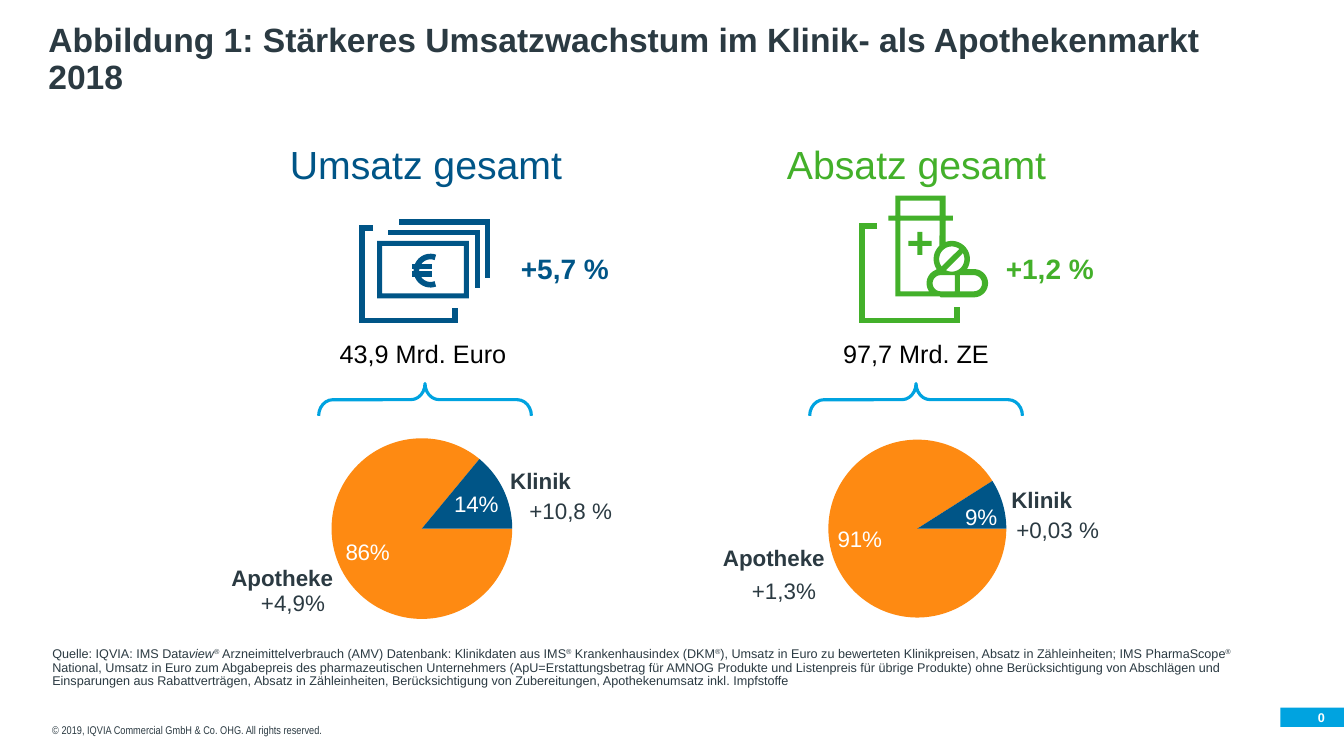
from dataclasses import dataclass
from math import cos, radians, sin

from lxml import etree
from pptx import Presentation
from pptx.chart.data import CategoryChartData
from pptx.dml.color import RGBColor
from pptx.enum.chart import XL_CHART_TYPE, XL_LABEL_POSITION
from pptx.enum.shapes import MSO_CONNECTOR, MSO_SHAPE
from pptx.enum.text import MSO_ANCHOR, MSO_AUTO_SIZE, PP_ALIGN
from pptx.oxml.ns import qn
from pptx.util import Emu, Inches, Pt

LEFT, CENTER, RIGHT = PP_ALIGN.LEFT, PP_ALIGN.CENTER, PP_ALIGN.RIGHT
TOP, MIDDLE, BOTTOM = MSO_ANCHOR.TOP, MSO_ANCHOR.MIDDLE, MSO_ANCHOR.BOTTOM
RECT, BRACE = MSO_SHAPE.RECTANGLE, MSO_SHAPE.LEFT_BRACE

DARK, BLACK, WHITE = "2B3A42", "000000", "FFFFFF"
NAVY, GREEN, CYAN, ORANGE = "005587", "43B02A", "00A3E0", "FE8A12"
CELL = Inches(0.1)  # columns and rows are both a tenth of an inch
TIGHT, PADDED = (0, 0), (1, 0.5)  # side and top insets in cells


@dataclass
class Label:
    text: str
    at: tuple  # column, row, columns wide, rows high
    size: float = 16
    color: str = DARK
    bold: bool = False
    align: PP_ALIGN = CENTER
    anchor: MSO_ANCHOR = TOP
    insets: tuple = TIGHT


@dataclass
class Pie:
    at: tuple
    plot: tuple  # x, y, width, height as shares of the chart
    shares: tuple
    brace_column: float


@dataclass
class Stroke:
    color: str
    points: list


@dataclass
class Silhouette:
    color: str
    contours: list  # the outer edge, then the holes


def cells(value: float) -> Emu:
    return Emu(round(value * CELL))


def rgb(color: str) -> RGBColor:
    return RGBColor.from_string(color)


def arc(x: float, y: float, radius: float, start: int, end: int) -> list:
    angles = [radians(start + (end - start) * step / 24) for step in range(25)]
    return [(x + radius * cos(a), y - radius * sin(a)) for a in angles]


def rectangle(left: float, top: float, right: float, bottom: float) -> list:
    return [(left, top), (right, top), (right, bottom), (left, bottom)]


def add_span(para, text, size, color, bold=False, font="Arial"):
    span = para.add_run()
    span.text = text
    span.font.name, span.font.size, span.font.bold = font, Pt(size), bold
    span.font.color.rgb = rgb(color)
    return span


def set_frame(box, anchor, insets, wrap):
    frame = box.text_frame
    frame.auto_size, frame.word_wrap, frame.vertical_anchor = MSO_AUTO_SIZE.NONE, wrap, anchor
    frame.margin_left = frame.margin_right = cells(insets[0])
    frame.margin_top = frame.margin_bottom = cells(insets[1])
    return frame.paragraphs[0]


def add_label(page, label: Label):
    box = page.shapes.add_textbox(*map(cells, label.at))
    para = set_frame(box, label.anchor, label.insets, label.insets == PADDED)
    para.alignment = label.align
    add_span(para, label.text, label.size, label.color, label.bold)


def set_fill(shape, color: str):
    shape.fill.solid()
    shape.fill.fore_color.rgb = rgb(color)
    shape.line.fill.background()
    shape.shadow.inherit = False


def add_band(page, at: tuple, color: str):
    band = page.shapes.add_shape(RECT, *map(cells, at))
    set_fill(band, color)
    return band


def add_stroke(page, stroke: Stroke):
    points = [(cells(x), cells(y)) for x, y in stroke.points]
    if len(points) == 2:
        line = page.shapes.add_connector(MSO_CONNECTOR.STRAIGHT, *points[0], *points[1])
    else:
        builder = page.shapes.build_freeform(*points[0], scale=1.0)
        builder.add_line_segments(points[1:], close=False)
        line = builder.convert_to_shape()
        line.fill.background()
    line.line.color.rgb, line.line.width = rgb(stroke.color), Pt(4)
    etree.SubElement(line.line._get_or_add_ln(), qn("a:miter"), lim="800000")
    etree.SubElement(line._element.spPr, qn("a:effectLst"))


def add_silhouette(page, silhouette: Silhouette):
    outer, *holes = [[(cells(x), cells(y)) for x, y in c] for c in silhouette.contours]
    builder = page.shapes.build_freeform(*outer[0], scale=1.0)
    builder.add_line_segments(outer[1:], close=True)
    for hole in holes:
        builder.move_to(*hole[0])
        builder.add_line_segments(hole[1:], close=True)
    set_fill(builder.convert_to_shape(), silhouette.color)


def add_brace(page, column: float):
    brace = page.shapes.add_shape(BRACE, *map(cells, (column, 29.1, 3.2, 21.1)))
    brace.rotation = 90
    brace.adjustments[0], brace.adjustments[1] = 0.44, 0.5
    brace.fill.background()
    brace.line.color.rgb, brace.line.width = rgb(CYAN), Pt(2.25)
    brace.shadow.inherit = False


def add_pie(page, pie: Pie):
    data = CategoryChartData(number_format='0"%"')
    data.categories = ["1", "2"]
    data.add_series("Series 1", pie.shares)
    chart = page.shapes.add_chart(XL_CHART_TYPE.PIE, *map(cells, pie.at), data).chart
    chart.has_title = chart.has_legend = False
    chart.font.name, chart.font.size, chart.font.color.rgb = "Arial", Pt(10), rgb(DARK)
    plot = chart.plots[0]
    plot.vary_by_categories = False
    for index, color in enumerate((ORANGE, NAVY)):
        fill = plot.series[0].points[index].format.fill
        fill.solid()
        fill.fore_color.rgb = rgb(color)
    labels = plot.series[0].data_labels
    labels.show_value, labels.position = True, XL_LABEL_POSITION.INSIDE_END
    labels.number_format, labels.number_format_is_linked = '0"%"', False
    labels.font.name, labels.font.size, labels.font.color.rgb = "Arial", Pt(16), rgb(WHITE)
    # First slice starts at three o'clock, inner plot area is fixed
    area = chart._chartSpace.chart.plotArea
    etree.SubElement(area.find(qn("c:pieChart")), qn("c:firstSliceAng"), val="90")
    for old in area.findall(qn("c:layout")):
        area.remove(old)
    layout = etree.Element(qn("c:layout"))
    manual = etree.SubElement(layout, qn("c:manualLayout"))
    settings = [("layoutTarget", "inner"), ("xMode", "edge"), ("yMode", "edge")]
    for name, value in settings + list(zip("xywh", pie.plot)):
        etree.SubElement(manual, qn(f"c:{name}"), val=str(value))
    area.insert(0, layout)


BOTTLE_AND_PILLS = [
    [(96, 26.7), *arc(94.4, 25.7, 1.8, -33, 110), (93.8, 21.9), (94.5, 21.9), (94.5, 21.4), (93.8, 21.4),
     (93.8, 19.4), (88.8, 19.4), (88.8, 21.4), (88.1, 21.4), (88.1, 21.9), (88.8, 21.9), (88.8, 29.4),
     (93.2, 29.4), (93.3, 29.5), *arc(96.6, 28.1, 1.4, -90, 90)],
    [*arc(93.3, 28.1, 0.8, 90, 270), (94.7, 28.9), (94.7, 27.3)],
    [*arc(96.6, 28.1, 0.8, -90, 90), (95.2, 27.3), (95.2, 28.9)],
    arc(94.4, 25.7, 1.25, 28, -118),
    arc(94.4, 25.7, 1.25, 216, 53),
    rectangle(89.3, 19.9, 93.2, 21.4),
    [(89.3, 21.9), (93.2, 21.9), *arc(94.4, 25.7, 1.8, 133, 214), *arc(93.3, 28.1, 1.4, 116, 215), (89.3, 28.9)],
]
PLUS = [(92.4, 23.9), (91.5, 23.9), (91.5, 23), (91, 23), (91, 23.9), (90.1, 23.9),
        (90.1, 24.4), (91, 24.4), (91, 25.3), (91.5, 25.3), (91.5, 24.4), (92.4, 24.4)]
ICONS = [
    # Banknotes
    Stroke(NAVY, [(37, 22.6), (35.9, 22.6), (35.9, 31.8), (45.1, 31.8), (45.1, 30.6)]),
    Stroke(NAVY, [(39.6, 22.05), (48.35, 22.05), (48.35, 27.6)]),
    Stroke(NAVY, [(38.5, 23.05), (47.35, 23.05), (47.35, 28.6)]),
    Silhouette(NAVY, [rectangle(37.4, 23.9, 46.5, 29.6), rectangle(37.9, 24.4, 46, 29.1)]),
    Stroke(NAVY, arc(42.7, 26.85, 1.4, 70, 290)),
    Stroke(NAVY, [(40.9, 26.45), (42.8, 26.45)]),
    Stroke(NAVY, [(40.9, 27.2), (42.8, 27.2)]),
    # Medicine
    Stroke(GREEN, [(87, 22.4), (85.5, 22.4), (85.5, 31.8), (94.95, 31.8), (94.95, 30.5)]),
    Silhouette(GREEN, BOTTLE_AND_PILLS),
    Silhouette(GREEN, [PLUS]),
]
PIES = [
    Pie((25.8, 42.5, 32.1, 19.7), (0.22, 0.05, 0.56, 0.91), (86, 14), 40.55),
    Pie((75.1, 42.6, 32.1, 19.5), (0.22, 0.05, 0.55, 0.91), (91, 9), 89.25),
]
LABELS = [
    # Revenue
    Label("Umsatz gesamt", (28.6, 13.9, 27.3, 4.7), 28, NAVY),
    Label("+5,7 %", (51.6, 25, 8.8, 3.4), 20, NAVY, True, RIGHT),
    Label("43,9 Mrd. Euro", (33.6, 33.6, 16.7, 3), 18, BLACK),
    Label("Klinik", (50.6, 46.3, 6.1, 2.7), bold=True, align=LEFT, anchor=MIDDLE),
    Label("+10,8 %", (51.15, 48.85, 10.9, 3.7), insets=PADDED),
    Label("Apotheke", (22.95, 55.9, 10.1, 2.7), bold=True, align=RIGHT, anchor=MIDDLE),
    Label("+4,9%", (24.9, 58, 11.1, 3.7), align=LEFT, insets=PADDED),
    # Units sold
    Label("Absatz gesamt", (77.9, 13.9, 26, 4.7), 28, GREEN),
    Label("+1,2 %", (99.7, 25, 8.8, 3.4), 20, GREEN, True, RIGHT),
    Label("97,7 Mrd. ZE", (83.55, 33.6, 14.6, 3), 18, BLACK),
    Label("Klinik", (100.3, 48.2, 6.1, 2.7), bold=True, align=LEFT, anchor=MIDDLE),
    Label("+0,03 %", (99.75, 50.7, 10.3, 3.7), insets=PADDED),
    Label("Apotheke", (71.7, 54, 10.1, 2.7), bold=True, align=RIGHT, anchor=MIDDLE),
    Label("+1,3%", (73.6, 56.8, 9.5, 3.7), align=LEFT, insets=PADDED),
    # Page number
    Label("0", (127, 70.2, 4.4, 1.9), 9, WHITE, True, RIGHT, MIDDLE),
]
SOURCE = [
    "Quelle: IQVIA: IMS Data", "view", "®", " Arzneimittelverbrauch (AMV) Datenbank: Klinikdaten aus IMS", "®",
    " Krankenhausindex (DKM", "®", "), Umsatz in Euro zu bewerteten Klinikpreisen, Absatz in Zähleinheiten; "
    "IMS PharmaScope", "®", " National, Umsatz in Euro zum Abgabepreis des pharmazeutischen Unternehmers "
    "(ApU=Erstattungsbetrag für AMNOG Produkte und Listenpreis für übrige Produkte) ohne Berücksichtigung von "
    "Abschlägen und Einsparungen aus Rabattverträgen, Absatz in Zähleinheiten, Berücksichtigung von "
    "Zubereitungen, Apothekenumsatz inkl. Impfstoffe",
]
COPYRIGHT = "© 2019, IQVIA Commercial GmbH & Co. OHG. All rights reserved."


def main():
    deck = Presentation()
    deck.slide_width, deck.slide_height = Inches(13.33), Inches(7.5)
    page = deck.slides.add_slide(deck.slide_layouts[5])

    # Title
    title = page.shapes.title
    title.left, title.top, title.width, title.height = map(cells, (3.8, 1.65, 124, 8.4))
    para = set_frame(title, BOTTOM, PADDED, True)
    para.alignment, para.line_spacing = LEFT, 0.9
    add_span(para, "Abbildung 1: Stärkeres Umsatzwachstum im Klinik- als Apothekenmarkt 2018", 24, DARK, True)

    # Page number band, icons, pies and labels
    add_band(page, (127, 70.2, 6.3, 1.9), CYAN)
    for part in ICONS:
        (add_stroke if isinstance(part, Stroke) else add_silhouette)(page, part)
    for pie in PIES:
        add_brace(page, pie.brace_column)
        add_pie(page, pie)
    for label in LABELS:
        add_label(page, label)

    # Source note and copyright line
    note = page.shapes.add_textbox(*map(cells, (4.2, 65.1, 122.9, 3.7)))
    para = set_frame(note, BOTTOM, PADDED, True)
    para.line_spacing = 0.9
    for text in SOURCE:
        span = add_span(para, text, 9, DARK)
        span.font.italic = text == "view"
        if text == "®":
            span.font._element.set("baseline", "30000")
    footer = add_band(page, (4.2, 69.9, 99.7, 3.7), WHITE)
    para = set_frame(footer, BOTTOM, PADDED, True)
    para.alignment = LEFT
    add_span(para, COPYRIGHT, 8, DARK, font="Arial Narrow")

    deck.save("out.pptx")


if __name__ == "__main__":
    main()
